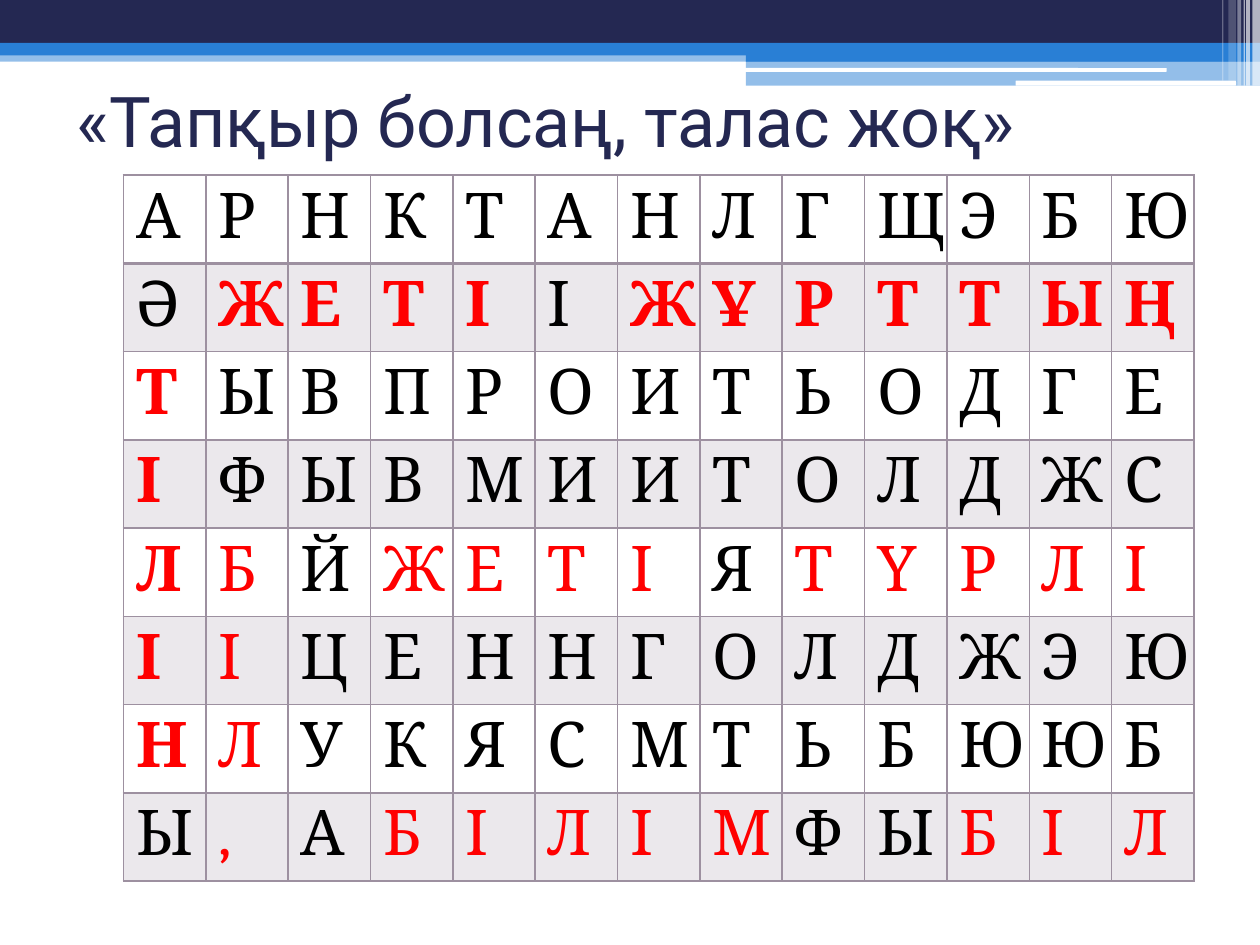
"""Build a word-search slide with a layered header band."""
from dataclasses import dataclass

from lxml.etree import SubElement
from pptx import Presentation
from pptx.dml.color import RGBColor
from pptx.enum.shapes import MSO_SHAPE as Shape
from pptx.enum.text import MSO_ANCHOR as Anchor
from pptx.oxml import parse_xml
from pptx.oxml.ns import nsdecls, qn
from pptx.util import Inches, Pt


@dataclass(frozen=True)
class Theme:
    """Colours, fonts and type sizes of the slide."""
    navy: str = "242852"
    blue: str = "297FD5"
    white: str = "FFFFFF"
    mauve: str = "9D90A0"
    black: str = "000000"
    red: str = "FF0000"
    title_font: str = "Roboto"
    letter_font: str = "Cambria"
    title_size: int = 40
    letter_size: int = 36


THEME = Theme()
GRID_COLUMNS, GRID_ROWS = 100, 75
SLIDE_WIDTH, SLIDE_HEIGHT = Inches(10), Inches(7.5)

HEADER_BANDS = [
    (0, 4, 100, 0.9, THEME.blue, 50),
    (0, 0, 100, 3.4, THEME.navy, 100),
    (0, 3.4, 100, 1, THEME.blue, 100),
    (59.2, 3.9, 40.8, 1, THEME.blue, 100),
    (59.2, 4.8, 40.8, 2, THEME.blue, 50),
]
HEADER_RULES = [(59.1, 5.4, 33.5, 0.3), (80.6, 6.4, 17.5, 0.4)]
CORNER_STRIPES = [
    (99.4, 0.6, 6.8, 65),
    (98.9, 0.3, 6.8, 65),
    (98.7, 0.1, 6.8, 60),
    (98.2, 0.3, 6.8, 40),
    (97.5, 0.6, 6.4, 20),
    (97, 0.1, 6.4, 30),
]

LETTER_ROWS = [
    ("АРНКТАНЛГЩЭБЮ", "............."),
    ("ӘЖЕТІІЖҰРТТЫҢ", ".BBBB.BBBBBBB"),
    ("ТЫВПРОИТЬОДГЕ", "B............"),
    ("ІФЫВМИИТОЛДЖС", "B............"),
    ("ЛБЙЖЕТІЯТҮРЛІ", "Br.rrrr.rrrrr"),
    ("ІІЦЕННГОЛДЖЭЮ", "Br..........."),
    ("НЛУКЯСМТЬБЮЮБ", "Br..........."),
    ("Ы,АБІЛІМФЫБІЛ", ".r.rrrrr..rrr"),
]


def place(left, top, width, height):
    """Turn grid columns and rows into slide lengths."""
    column, row = SLIDE_WIDTH / GRID_COLUMNS, SLIDE_HEIGHT / GRID_ROWS
    return [round(n) for n in (left * column, top * row, width * column, height * row)]


def paint(fill, element, color, opacity=100):
    """Apply a solid fill with the given opacity in percent."""
    fill.solid()
    fill.fore_color.rgb = RGBColor.from_string(color)
    if opacity < 100:
        color_node = next(element.iter(qn("a:srgbClr")))
        SubElement(color_node, qn("a:alpha"), val=str(opacity * 1000))


def style_text(paragraph, text, font, size, color, bold=False):
    """Write text into a paragraph and set its font."""
    paragraph.text = text
    paragraph.font.name = font
    paragraph.font.size = Pt(size)
    paragraph.font.bold = bold
    paragraph.font.color.rgb = RGBColor.from_string(color)


def add_band(slide, box, color, opacity=100, kind=Shape.RECTANGLE):
    """Add a borderless filled band."""
    shape = slide.shapes.add_shape(kind, *place(*box))
    shape.shadow.inherit = False
    shape.line.fill.background()
    paint(shape.fill, shape.element, color, opacity)


def add_header(slide):
    """Add the layered header bands, white rules and corner stripes."""
    for *box, color, opacity in HEADER_BANDS:
        add_band(slide, box, color, opacity)
    for box in HEADER_RULES:
        add_band(slide, box, THEME.white, kind=Shape.ROUNDED_RECTANGLE)
    for left, width, height, opacity in CORNER_STRIPES:
        add_band(slide, (left, 0, width, height), THEME.white, opacity)


def add_title(slide, text):
    """Add the slide title."""
    frame = slide.shapes.add_textbox(*place(5.1, 3.6, 90, 11.7)).text_frame
    frame.word_wrap = True
    frame.vertical_anchor = Anchor.MIDDLE
    style_text(frame.paragraphs[0], text, THEME.title_font, THEME.title_size, THEME.navy)


def add_borders(cell, widths):
    """Draw the cell's left, right, top and bottom borders."""
    properties = cell._tc.get_or_add_tcPr()
    for index, (side, width) in enumerate(zip("LRTB", widths)):
        properties.insert(index, parse_xml(
            f'<a:ln{side} {nsdecls("a")} w="{Pt(width)}"><a:solidFill>'
            f'<a:srgbClr val="{THEME.mauve}"/></a:solidFill></a:ln{side}>'))


def fill_cell(cell, letter, mark, row):
    """Write one letter and give its cell the row's shading and borders."""
    color = THEME.black if mark == "." else THEME.red
    style_text(cell.text_frame.paragraphs[0], letter, THEME.letter_font,
               THEME.letter_size, color, bold=mark == "B")
    if row % 2:
        paint(cell.fill, cell._tc.get_or_add_tcPr(), THEME.mauve, 20)
    else:
        cell.fill.background()
    add_borders(cell, (1, 1, 2 if row == 1 else 1, 2 if row == 0 else 1))


def add_letter_grid(slide):
    """Add the word-search table."""
    row_count, column_count = len(LETTER_ROWS), len(LETTER_ROWS[0][0])
    box = place(9.8, 13.9, 85, 6.7 * row_count)
    table = slide.shapes.add_table(row_count, column_count, *box).table
    table.first_row = table.horz_banding = False
    for row, (letters, marks) in enumerate(LETTER_ROWS):
        for column, (letter, mark) in enumerate(zip(letters, marks)):
            fill_cell(table.cell(row, column), letter, mark, row)


def main():
    """Create and save the presentation."""
    presentation = Presentation()
    presentation.slide_width, presentation.slide_height = SLIDE_WIDTH, SLIDE_HEIGHT
    slide = presentation.slides.add_slide(presentation.slide_layouts[6])
    add_header(slide)
    add_title(slide, "«Тапқыр болсаң, талас жоқ»")
    add_letter_grid(slide)
    presentation.save("out.pptx")


if __name__ == "__main__":
    main()
